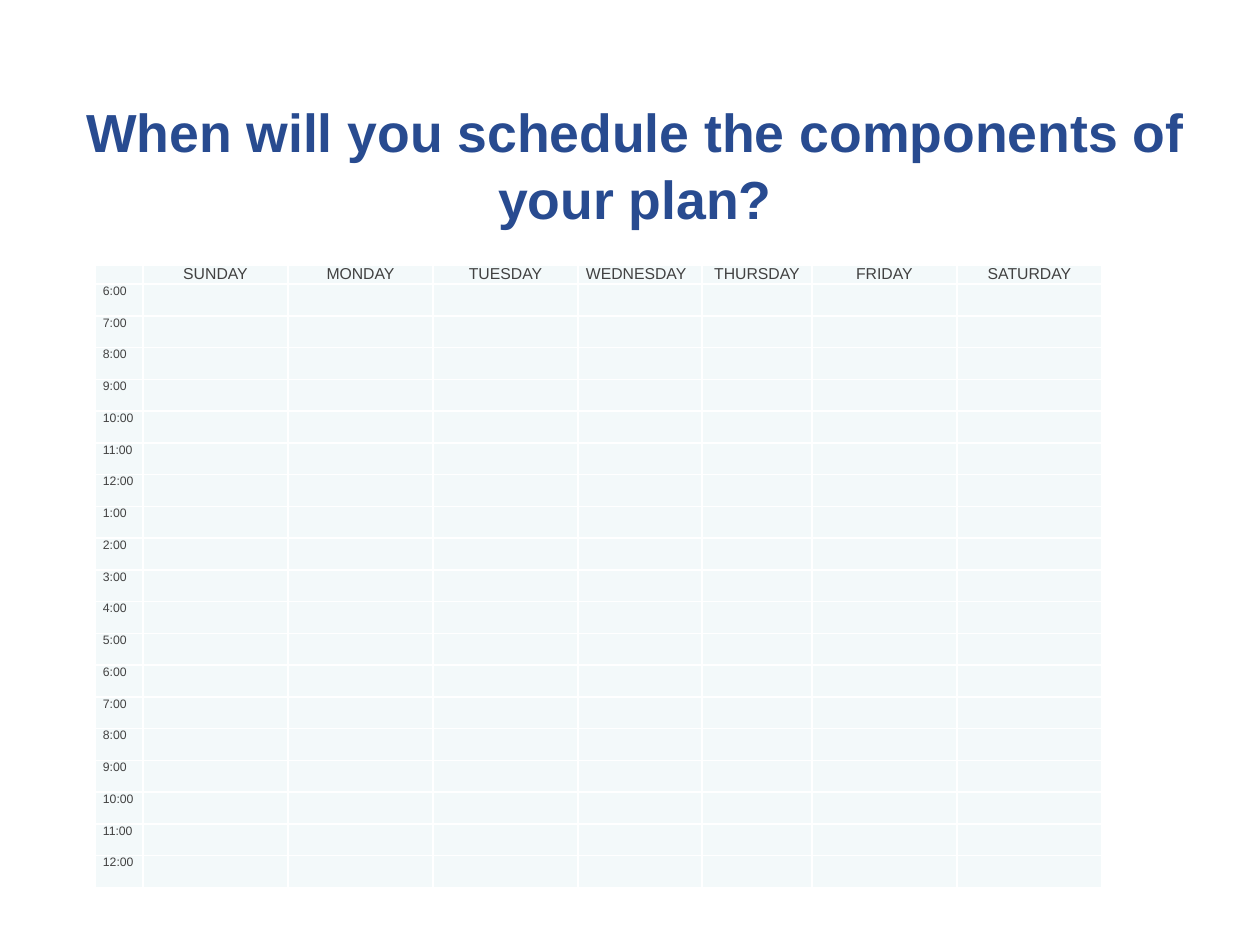
from lxml.etree import SubElement
from pptx import Presentation
from pptx.dml.color import RGBColor
from pptx.enum.text import MSO_ANCHOR, MSO_AUTO_SIZE, PP_ALIGN
from pptx.oxml.ns import qn
from pptx.util import Emu, Inches, Pt

COLORS = {"title": "284B90", "text": "414141", "cell": "F3F9FA", "border": "FFFFFF"}
FONT = "Arial"
EMU_PER_PX = 914400 / 126

DAYS = ["SUNDAY", "MONDAY", "TUESDAY", "WEDNESDAY", "THURSDAY", "FRIDAY", "SATURDAY"]
HOURS = [f"{(hour - 1) % 12 + 1}:00" for hour in range(6, 25)]
COLUMN_WIDTHS = [48, 145, 145, 145, 124, 110, 145, 145]
HEADER_HEIGHT = 18


def px(length):
    return Emu(round(length * EMU_PER_PX))


class SlideBuilder:
    def __init__(self, slide):
        self.slide = slide

    def style(self, paragraph, size, color, bold=False, align=PP_ALIGN.LEFT):
        paragraph.alignment = align
        font = paragraph.font
        font.name, font.size, font.bold = FONT, Pt(size), bold
        font.color.rgb = RGBColor.from_string(COLORS[color])

    def title(self, text, left, top, width, height):
        shape = self.slide.shapes.title
        shape.left, shape.top = px(left), px(top)
        shape.width, shape.height = px(width), px(height)
        frame = shape.text_frame
        frame.text = text
        frame.word_wrap = True
        frame.auto_size = MSO_AUTO_SIZE.NONE
        frame.vertical_anchor = MSO_ANCHOR.MIDDLE
        frame.margin_left = frame.margin_right = 0
        frame.margin_top = frame.margin_bottom = 0
        paragraph = frame.paragraphs[0]
        paragraph.line_spacing = 1.04
        self.style(paragraph, 30.6, "title", True, PP_ALIGN.CENTER)

    def borders(self, cell):
        properties = cell._tc.get_or_add_tcPr()
        for position, side in enumerate(("a:lnL", "a:lnR", "a:lnT", "a:lnB")):
            line = properties.makeelement(qn(side), {"w": str(Pt(1))})
            fill = SubElement(line, qn("a:solidFill"))
            SubElement(fill, qn("a:srgbClr"), val=COLORS["border"])
            properties.insert(position, line)

    def cell(self, cell, text, size, align):
        cell.fill.solid()
        cell.fill.fore_color.rgb = RGBColor.from_string(COLORS["cell"])
        cell.margin_left = cell.margin_right = px(8)
        cell.margin_top = cell.margin_bottom = 0
        self.borders(cell)
        paragraph = cell.text_frame.paragraphs[0]
        if text:
            paragraph.text = text
            self.style(paragraph, size, "text", align=align)
        else:
            # A small end mark keeps empty rows from growing
            SubElement(paragraph._p, qn("a:endParaRPr"), sz=str(size * 100))

    def schedule(self, left, top, height):
        table = self.slide.shapes.add_table(
            len(HOURS) + 1, len(COLUMN_WIDTHS),
            px(left), px(top), px(sum(COLUMN_WIDTHS)), px(height)).table
        table.first_row = table.horz_banding = False
        for column, width in zip(table.columns, COLUMN_WIDTHS):
            column.width = px(width)
        hour_height = (height - HEADER_HEIGHT) / len(HOURS)
        grid = [[""] + DAYS] + [[hour] + [""] * len(DAYS) for hour in HOURS]
        for row_index, texts in enumerate(grid):
            header = row_index == 0
            row = table.rows[row_index]
            row.height = px(HEADER_HEIGHT if header else hour_height)
            for cell, text in zip(row.cells, texts):
                centred = header and text != "WEDNESDAY"
                self.cell(cell, text, 9 if header else 7,
                          PP_ALIGN.CENTER if centred else PP_ALIGN.LEFT)


def main():
    presentation = Presentation()
    presentation.slide_width, presentation.slide_height = Inches(10), Inches(7.5)
    builder = SlideBuilder(presentation.slides.add_slide(presentation.slide_layouts[5]))

    # Heading
    builder.title("When will you schedule the components of your plan?", 73, 105, 1124, 116)

    # Weekly timetable
    builder.schedule(95, 265, 622)

    presentation.save("out.pptx")


if __name__ == "__main__":
    main()
